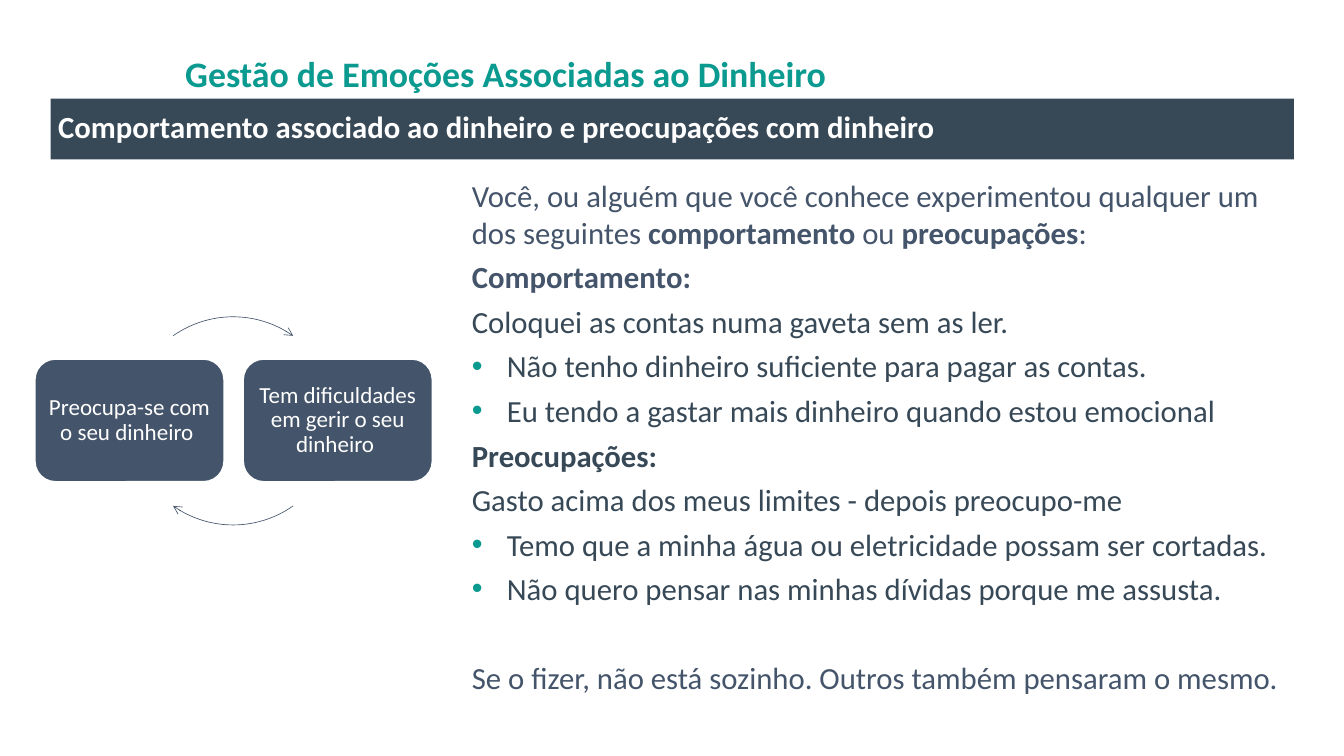
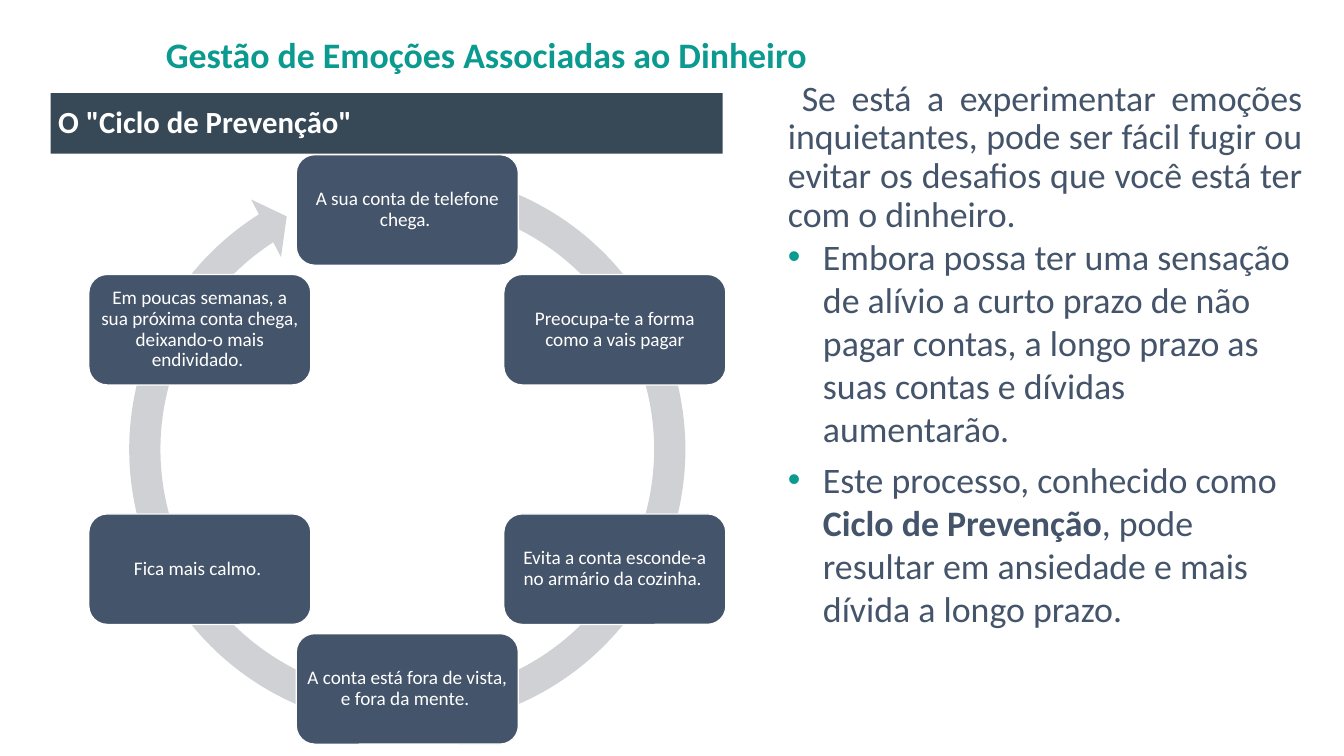
from dataclasses import dataclass
from math import cos, radians, sin

from lxml import etree
from pptx import Presentation
from pptx.dml.color import RGBColor
from pptx.enum.shapes import MSO_SHAPE
from pptx.enum.text import MSO_ANCHOR, MSO_AUTO_SIZE, PP_ALIGN
from pptx.oxml.ns import qn
from pptx.util import Inches, Pt

# Shared style
FONT = "Calibri"
TEAL, SLATE, NAVY, GREY, WHITE = "0A9A8F", "374856", "44546A", "CFD1D4", "FFFFFF"
TITLE = "Gestão de Emoções Associadas ao Dinheiro"
LEFT, CENTER, JUSTIFY = PP_ALIGN.LEFT, PP_ALIGN.CENTER, PP_ALIGN.JUSTIFY
TOP, MIDDLE = MSO_ANCHOR.TOP, MSO_ANCHOR.MIDDLE
NO_FIT = MSO_AUTO_SIZE.NONE
RECTANGLE_ROUNDED, ARC, RING = (
    MSO_SHAPE.ROUNDED_RECTANGLE, MSO_SHAPE.ARC, MSO_SHAPE.CIRCULAR_ARROW)
TWO_CONTENT = 3
HANGING = 0.38
DEGREE = 0.6  # one degree in adjustment units
PERCENT = 0.01


@dataclass
class Para:
    spans: list  # (text, bold) pairs
    size: float = 24
    color: str = NAVY
    bullet: bool = False
    align: PP_ALIGN = LEFT
    line: float = 1.0
    before: float = 0
    after: float = 0
    first_indent: float = 0


def rgb(value):
    return RGBColor.from_string(value)


def place(shape, left, top, width, height):
    shape.left, shape.top = Inches(left), Inches(top)
    shape.width, shape.height = Inches(width), Inches(height)


def set_bullet(para, shown, first_indent):
    props = para._p.get_or_add_pPr()
    props.set("marL", str(Inches(HANGING if shown else 0)))
    props.set("indent", str(Inches(-HANGING if shown else first_indent)))
    if not shown:
        etree.SubElement(props, qn("a:buNone"))
        return
    color = etree.SubElement(props, qn("a:buClr"))
    etree.SubElement(color, qn("a:srgbClr"), val=TEAL)
    etree.SubElement(props, qn("a:buFont"), typeface="Arial")
    etree.SubElement(props, qn("a:buChar"), char="•")


def write(shape, paras, anchor, inset=(0.08, 0.05)):
    frame = shape.text_frame
    frame.word_wrap, frame.auto_size = True, NO_FIT
    frame.vertical_anchor = anchor
    frame.margin_left = frame.margin_right = Inches(inset[0])
    frame.margin_top = frame.margin_bottom = Inches(inset[1])
    for index, item in enumerate(paras):
        para = frame.add_paragraph() if index else frame.paragraphs[0]
        para.alignment, para.line_spacing = item.align, item.line
        para.space_before, para.space_after = Pt(item.before), Pt(item.after)
        set_bullet(para, item.bullet, item.first_indent)
        for text, bold in item.spans:
            span = para.add_run()
            span.text = text
            span.font.name, span.font.size = FONT, Pt(item.size)
            span.font.bold = bold
            span.font.color.rgb = rgb(item.color)


def add_page(deck, title_at, band_at, band_text, body_at, body):
    """Title, dark heading band and body text in the template's placeholders."""
    page = deck.slides.add_slide(deck.slide_layouts[TWO_CONTENT])
    for holder in list(page.placeholders):
        if holder.placeholder_format.idx not in (0, 1, 2):
            holder.element.getparent().remove(holder.element)
    title, text, band = (page.placeholders[idx] for idx in (0, 1, 2))
    place(title, *title_at)
    write(title, [Para([(TITLE, True)], 28, TEAL, line=0.9)], MIDDLE)
    place(band, *band_at)
    band.fill.solid()
    band.fill.fore_color.rgb = rgb(SLATE)
    write(band, [Para([(band_text, True)], 24, WHITE, line=0.9)], MIDDLE)
    place(text, *body_at)
    write(text, body, TOP)
    return page


def add_figure(page, kind, at, fill=None, line=None, width=1, adjust=()):
    shape = page.shapes.add_shape(kind, *(Inches(value) for value in at))
    shape.shadow.inherit = False
    for index, value in enumerate(adjust):
        shape.adjustments[index] = value
    if fill:
        shape.fill.solid()
        shape.fill.fore_color.rgb = rgb(fill)
    else:
        shape.fill.background()
    if line:
        shape.line.color.rgb = rgb(line)
        shape.line.width = Pt(width)
    else:
        shape.line.fill.background()
    return shape


def add_step(page, at, text, size, inset):
    box = add_figure(page, RECTANGLE_ROUNDED, at, NAVY, WHITE)
    write(box, [Para([(text, False)], size, WHITE, align=CENTER, line=0.9)],
          MIDDLE, (inset, inset))


def add_arc_arrow(page, at, start, end):
    arc = add_figure(page, ARC, at, line=NAVY, width=0.5,
                     adjust=(start * DEGREE, end * DEGREE))
    etree.SubElement(arc.line._get_or_add_ln(), qn("a:tailEnd"), type="arrow")


def add_behaviour_page(deck):
    def item(text, color=SLATE, bold=False, bullet=False, before=0):
        return Para([(text, bold)], 24, color, bullet, before=before, after=6)

    intro = Para([
        ("Você, ou alguém que você conhece experimentou qualquer um dos seguintes ", False),
        ("comportamento ", True), ("ou ", False), ("preocupações", True), (":", False),
    ], after=6)
    body = [
        intro,
        item("Comportamento:", NAVY, bold=True),
        item("Coloquei as contas numa gaveta sem as ler."),
        item("Não tenho dinheiro suficiente para pagar as contas.", bullet=True),
        item("Eu tendo a gastar mais dinheiro quando estou emocional", bullet=True),
        item("Preocupações:", bold=True),
        item("Gasto acima dos meus limites - depois preocupo-me"),
        item("Temo que a minha água ou eletricidade possam ser cortadas.", bullet=True),
        item("Não quero pensar nas minhas dívidas porque me assusta.", bullet=True),
        item("Se o fizer, não está sozinho. Outros também pensaram o mesmo.", NAVY, before=35),
    ]
    page = add_page(deck, (1.93, 0.43, 7.88, 0.79), (0.55, 1.07, 13.49, 0.66),
                    "Comportamento associado ao dinheiro e preocupações com dinheiro ",
                    (5.04, 1.87, 9.16, 6.27), body)

    # Two-step loop
    steps = ["Preocupa-se com o seu dinheiro ", "Tem dificuldades em gerir o seu dinheiro "]
    for index, text in enumerate(steps):
        add_step(page, (0.38 + 2.26 * index, 3.9, 2.05, 1.33), text, 18, 0.07)
    for start, end in ((234.8, 305.2), (54.8, 125.2)):
        add_arc_arrow(page, (1.4, 3.44, 2.26, 2.26), start, end)


def add_cycle_page(deck):
    body = [
        Para([("Se está a experimentar emoções inquietantes, pode ser fácil fugir ou "
               "evitar os desafios que você está ter com o dinheiro. ", False)],
             28, align=JUSTIFY, line=0.9, first_indent=0.15),
        Para([("Embora possa ter uma sensação de alívio a curto prazo de não pagar "
               "contas, a longo prazo as suas contas e dívidas aumentarão.", False)],
             28, bullet=True, after=6),
        Para([("Este processo, conhecido como ", False), ("Ciclo de Prevenção", True),
              (", pode resultar em ansiedade e mais dívida a longo prazo.", False)],
             28, bullet=True, after=6),
    ]
    page = add_page(deck, (1.72, 0.22, 12.15, 0.79), (0.55, 1.01, 7.29, 0.66),
                    "O \"Ciclo de Prevenção\" ", (8.47, 0.82, 5.74, 7.38), body)

    # Ring with the steps clockwise from the top
    add_figure(page, RING, (1.22, 1.68, 6.4, 6.4), GREY,
               adjust=(5.3 * PERCENT, 5.21 * DEGREE, 237.45 * DEGREE,
                       285.27 * DEGREE, 5.5 * PERCENT))
    steps = [
        "A sua conta de telefone chega. ",
        "Preocupa-te a forma como a vais pagar",
        "Evita a conta esconde-a no armário da cozinha. ",
        "A conta está fora de vista, e fora da mente. ",
        "Fica mais calmo. ",
        "Em poucas semanas, a sua próxima conta chega, deixando-o mais endividado. ",
    ]
    center_x, center_y, radius = 4.42, 4.88, 2.6
    width, height = 2.41, 1.2
    for index, text in enumerate(steps):
        angle = radians(360 / len(steps) * index)
        left = center_x + radius * sin(angle) - width / 2
        top = center_y - radius * cos(angle) - height / 2
        add_step(page, (left, top, width, height), text, 15, 0.06)


def main():
    deck = Presentation()
    deck.slide_width, deck.slide_height = Pt(1050), Pt(591)
    add_behaviour_page(deck)
    add_cycle_page(deck)
    deck.save("out.pptx")


if __name__ == "__main__":
    main()
